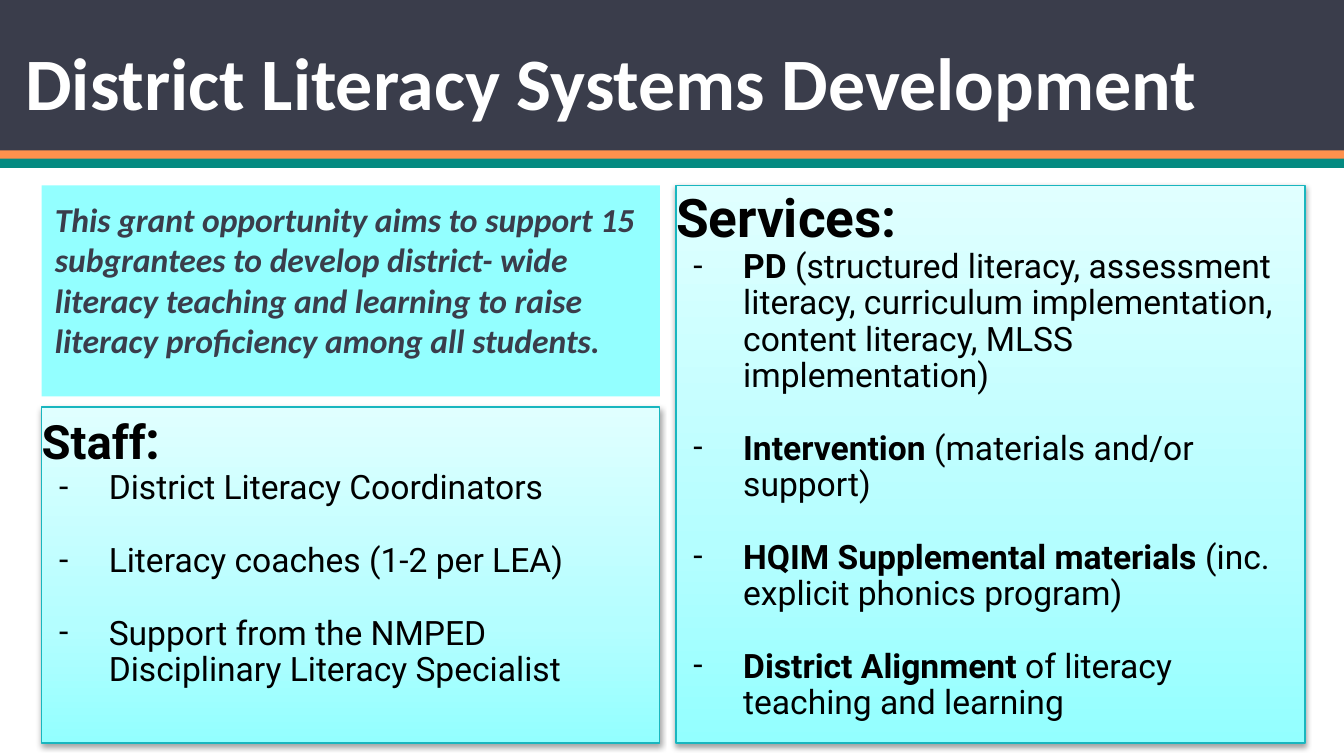
from lxml.etree import SubElement
from pptx import Presentation
from pptx.dml.color import RGBColor
from pptx.enum.shapes import MSO_SHAPE
from pptx.enum.text import MSO_ANCHOR, PP_ALIGN
from pptx.oxml.ns import qn
from pptx.util import Inches, Pt

TITLE = "District Literacy Systems Development"
INTRO = ("This grant opportunity aims to support 15 subgrantees to develop district- wide "
         "literacy teaching and learning to raise literacy proficiency among all students.")
BANDS = [(0, 1.13, "3A3D4B"), (1.12, 0.07, "FF914D"), (1.18, 0.07, "048A81")]
GRADIENT = [(0, "93FFFF"), (35, "B4FEFF"), (100, "E0FFFF")]
PANELS = [
    {
        "box": (0.31, 3.03, 4.6, 2.5),
        "heading": [("Staff", 25.3), (":", 28.3)],
        "items": [
            ("", "District Literacy Coordinators"),
            ("", "Literacy coaches (1-2 per LEA)"),
            ("", "Support from the NMPED Disciplinary Literacy Specialist"),
        ],
    },
    {
        "box": (5.03, 1.38, 4.68, 4.15),
        "heading": [("Services:", 28.5)],
        "items": [
            ("PD", " (structured literacy, assessment literacy, curriculum implementation, "
                   "content literacy, MLSS implementation)"),
            ("Intervention", " (materials and/or support)"),
            ("HQIM Supplemental materials", " (inc. explicit phonics program)"),
            ("District Alignment", " of literacy teaching and learning"),
        ],
    },
]


def color(value):
    return RGBColor.from_string(value)


def add_text(paragraph, text, size=18, font="Roboto", fill="000000", bold=False, italic=False):
    run = paragraph.add_run()
    run.text = text
    run.font.size = Pt(size)
    run.font.name = font
    run.font.bold = bold
    run.font.italic = italic
    run.font.color.rgb = color(fill)


def set_frame(shape, margins, anchor=MSO_ANCHOR.TOP):
    frame = shape.text_frame
    frame.word_wrap = True
    frame.vertical_anchor = anchor
    (frame.margin_left, frame.margin_top,
     frame.margin_right, frame.margin_bottom) = [Inches(margin) for margin in margins]
    frame.paragraphs[0].alignment = PP_ALIGN.LEFT
    return frame


def add_rectangle(slide, box, fill):
    shape = slide.shapes.add_shape(MSO_SHAPE.RECTANGLE, *[Inches(length) for length in box])
    shape.shadow.inherit = False
    shape.fill.solid()
    shape.fill.fore_color.rgb = color(fill)
    shape.line.fill.background()
    return shape


def add_gradient(shape):
    shape.fill.gradient()
    shape.fill.gradient_angle = 90
    stops = shape.element.spPr.find(".//" + qn("a:gsLst"))
    for stop in list(stops):
        stops.remove(stop)
    for position, value in GRADIENT:
        stop = SubElement(stops, qn("a:gs"), pos=str(position * 1000))
        SubElement(stop, qn("a:srgbClr"), val=value)


def add_shadow(shape):
    effects = shape.element.spPr.find(qn("a:effectLst"))
    shadow = SubElement(effects, qn("a:outerShdw"), blurRad=str(Pt(3.1)), dist=str(Pt(1.6)),
                        dir="5400000", algn="t", rotWithShape="0")
    black = SubElement(shadow, qn("a:srgbClr"), val="000000")
    SubElement(black, qn("a:alpha"), val="37000")


def add_dash(paragraph):
    properties = paragraph._p.get_or_add_pPr()
    properties.set("marL", str(Inches(0.5)))
    properties.set("indent", str(Inches(-0.37)))
    bullet_color = SubElement(properties, qn("a:buClr"))
    SubElement(bullet_color, qn("a:srgbClr"), val="000000")
    SubElement(properties, qn("a:buFont"), typeface="Roboto")
    SubElement(properties, qn("a:buChar"), char="-")


def add_panel(slide, panel):
    shape = add_rectangle(slide, panel["box"], "93FFFF")
    add_gradient(shape)
    shape.line.color.rgb = color("19B6BF")
    shape.line.width = Pt(0.75)
    add_shadow(shape)
    frame = set_frame(shape, (0, 0.05, 0, 0))
    heading = frame.paragraphs[0]
    heading.line_spacing = 0.9
    for text, size in panel["heading"]:
        add_text(heading, text, size=size, bold=True)
    for index, (lead, detail) in enumerate(panel["items"]):
        paragraph = frame.add_paragraph()
        paragraph.alignment = PP_ALIGN.LEFT
        paragraph.line_spacing = 0.9
        paragraph.space_before = Pt(19.5 if index else 0)
        add_dash(paragraph)
        if lead:
            add_text(paragraph, lead, bold=True)
        add_text(paragraph, detail)


def main():
    presentation = Presentation()
    presentation.slide_width = Inches(10)
    presentation.slide_height = presentation.slide_width * 9 // 16
    slide = presentation.slides.add_slide(presentation.slide_layouts[6])

    for top, height, fill in BANDS:
        add_rectangle(slide, (0, top, 10, height), fill)

    title = slide.shapes.add_textbox(Inches(0.09), Inches(0), Inches(9.85), Inches(0.99))
    paragraph = set_frame(title, (0.1, 0.05, 0.1, 0.05), MSO_ANCHOR.BOTTOM).paragraphs[0]
    paragraph.line_spacing = 0.9
    add_text(paragraph, TITLE, size=39.6, font="Calibri", fill="FFFFFF", bold=True)

    for panel in PANELS:
        add_panel(slide, panel)

    intro = add_rectangle(slide, (0.31, 1.38, 4.6, 1.57), "93FFFF")
    paragraph = set_frame(intro, (0.1, 0.1, 0.1, 0.1)).paragraphs[0]
    add_text(paragraph, INTRO, font="Calibri", fill="3A3D4B", bold=True, italic=True)

    presentation.save("out.pptx")


if __name__ == "__main__":
    main()
